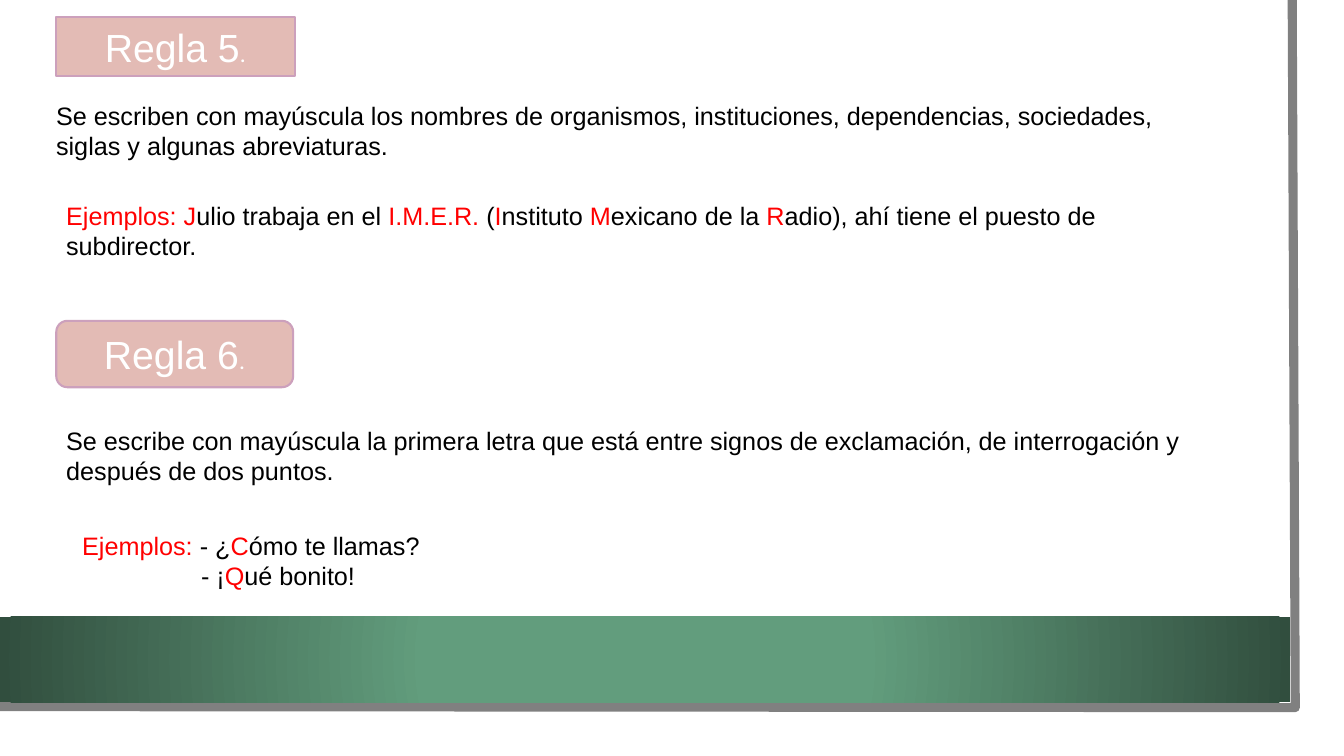
from dataclasses import dataclass

from lxml.etree import SubElement
from pptx import Presentation
from pptx.dml.color import RGBColor
from pptx.enum.shapes import MSO_SHAPE
from pptx.enum.text import MSO_ANCHOR, MSO_AUTO_SIZE, PP_ALIGN
from pptx.oxml import parse_xml
from pptx.oxml.ns import nsdecls, qn
from pptx.util import Inches, Pt

COLS, ROWS = 160, 90
CELL = Inches(1 / 12)

BADGES = [
    ("Regla 5", (6.7, 2, 28.4, 7.1)),
    ("Regla 6", (6.7, 38.2, 28.2, 7.9)),
]
TEXTS = [
    ((5.5, 11.3, 141.4, 8.5), [
        "Se escriben con mayúscula los nombres de organismos, instituciones, "
        "dependencias, sociedades, siglas y algunas abreviaturas."]),
    ((6.7, 23.2, 137, 8.5), [
        "|Ejemplos: J|ulio trabaja en el |I.M.E.R. |(|I|nstituto |M|exicano de la "
        "|R|adio), ahí tiene el puesto de subdirector."]),
    ((6.7, 50, 137, 8.5), [
        "Se escribe con mayúscula la primera letra que está entre signos de "
        "exclamación, de interrogación y después de dos puntos."]),
    ((8.6, 62.5, 64.7, 8.5), [
        "|Ejemplos: |- ¿|C|ómo te llamas?",
        "- ¡|Q|ué bonito!"]),
]
INDENT = 14.15
PAPER = (0, 0, 157.2, 87.2)
BAND = (0, 73.4, 153.6, 10.2)
EDGE = [(153.84, 0), (154.2, 84.24), (-0.36, 84.12)]


@dataclass(frozen=True)
class Theme:
    paper: str = "FFFFFF"
    edge: str = "808080"
    green: str = "629D7D"
    dark: str = "314E3E"
    badge: str = "E3BBB5"
    rim: str = "CCA0BC"
    ink: str = "000000"
    mark: str = "FF0000"
    font: str = "Arial"
    dot: str = "Roboto Condensed"
    head: int = 28
    body: int = 18
    rim_width: float = 1.5
    edge_width: float = 6.5


THEME = Theme()


def color(code):
    return RGBColor.from_string(code)


def grid(box):
    return [int(part * CELL) for part in box]


def write(par, text, size, code, font):
    run = par.add_run()
    run.text = text
    run.font.size = Pt(size)
    run.font.name = font
    run.font.color.rgb = color(code)


def add_block(shapes, kind, box):
    shape = shapes.add_shape(kind, *grid(box))
    shape.shadow.inherit = False
    return shape


def add_frame(shapes):
    paper = add_block(shapes, MSO_SHAPE.RECTANGLE, PAPER)
    paper.fill.solid()
    paper.fill.fore_color.rgb = color(THEME.paper)
    paper.line.fill.background()

    start, *rest = [grid(point) for point in EDGE]
    pen = shapes.build_freeform(*start)
    pen.add_line_segments(rest, close=False)
    edge = pen.convert_to_shape()
    edge.shadow.inherit = False
    edge.fill.background()
    edge.line.color.rgb = color(THEME.edge)
    edge.line.width = Pt(THEME.edge_width)

    band = add_block(shapes, MSO_SHAPE.RECTANGLE, BAND)
    band.line.fill.background()
    blend = parse_xml(
        f'<a:gradFill {nsdecls("a")} rotWithShape="1"><a:gsLst>'
        f'<a:gs pos="34000"><a:srgbClr val="{THEME.green}"/></a:gs>'
        f'<a:gs pos="100000"><a:srgbClr val="{THEME.dark}"/></a:gs></a:gsLst>'
        '<a:path path="circle"><a:fillToRect l="50000" t="50000" r="50000" b="50000"/>'
        '</a:path></a:gradFill>')
    band.element.spPr.find(qn("a:prstGeom")).addnext(blend)


def shape_title(title, box):
    title.left, title.top, title.width, title.height = grid(box)
    geom = SubElement(title.element.spPr, qn("a:prstGeom"), prst="roundRect")
    SubElement(geom, qn("a:avLst"))
    tree = title.element.getparent()
    tree.append(title.element)
    return title


def style_badge(shape, label):
    shape.fill.solid()
    shape.fill.fore_color.rgb = color(THEME.badge)
    shape.line.color.rgb = color(THEME.rim)
    shape.line.width = Pt(THEME.rim_width)
    frame = shape.text_frame
    frame.auto_size = MSO_AUTO_SIZE.NONE
    frame.vertical_anchor = MSO_ANCHOR.MIDDLE
    par = frame.paragraphs[0]
    par.alignment = PP_ALIGN.CENTER
    write(par, label, THEME.head, THEME.paper, THEME.font)
    write(par, ".", THEME.body, THEME.paper, THEME.dot)


def add_text(shapes, box, lines):
    frame = shapes.add_textbox(*grid(box)).text_frame
    frame.word_wrap = True
    frame.auto_size = MSO_AUTO_SIZE.SHAPE_TO_FIT_TEXT
    for row, line in enumerate(lines):
        par = frame.add_paragraph() if row else frame.paragraphs[0]
        if row:
            par._p.get_or_add_pPr().set("marL", str(int(INDENT * CELL)))
        for turn, piece in enumerate(line.split("|")):
            if piece:
                code = THEME.mark if turn % 2 else THEME.ink
                write(par, piece, THEME.body, code, THEME.font)


def main():
    deck = Presentation()
    deck.slide_width, deck.slide_height = grid((COLS, ROWS))
    slide = deck.slides.add_slide(deck.slide_layouts[5])
    shapes = slide.shapes
    add_frame(shapes)
    (first, spot), (second, place) = BADGES
    style_badge(shape_title(shapes.title, spot), first)
    style_badge(add_block(shapes, MSO_SHAPE.ROUNDED_RECTANGLE, place), second)
    for box, lines in TEXTS:
        add_text(shapes, box, lines)
    deck.save("out.pptx")


if __name__ == "__main__":
    main()
